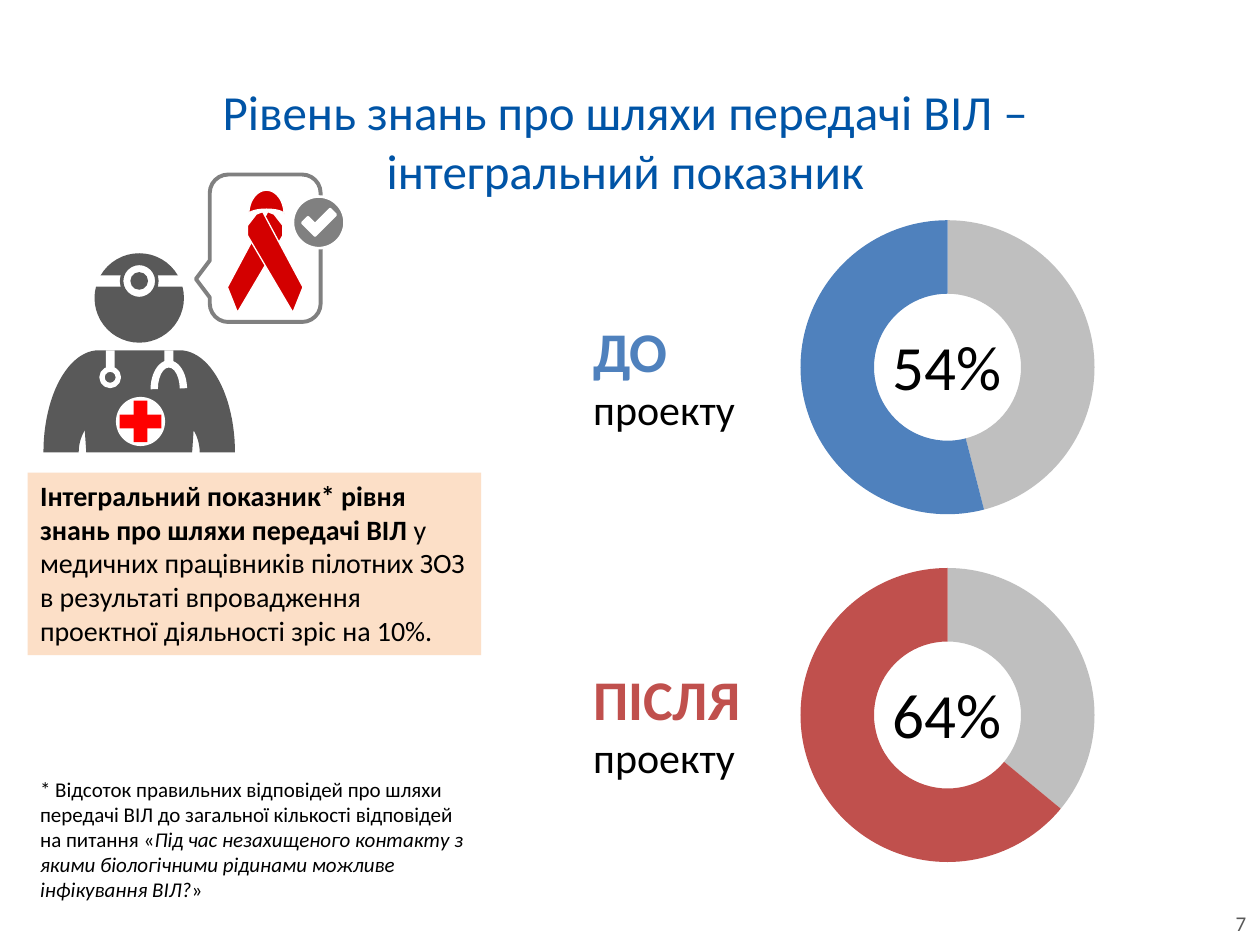
import math
import pptx
import pptx.chart.data
import pptx.dml.color
import pptx.enum.chart
import pptx.enum.shapes
import pptx.enum.text
import pptx.oxml
import pptx.oxml.ns
import pptx.util

W, H = 10, 7.5
FONT = "Calibri"
BLACK, WHITE, DARK, GREY = "000000", "FFFFFF", "595959", "808080"
BLUE, BRICK, RED, RIBBON = "4F81BD", "C0504D", "FF0000", "D30000"
TITLE_BLUE, REST, PEACH = "0054A6", "BFBFBF", "FCD5B5"
LEFT_COL, LEFT_W = 0.22, 3.6
FIRST_ROW, ROW_STEP = 1.61, 2.76

# Runs: text, size, colour, style (b bold, i italic)
TITLE = [("Рівень знань про шляхи передачі ВІЛ – \vінтегральний показник ",
          28, TITLE_BLUE, "")]
SUMMARY = [
    ("Інтегральний показник* рівня знань про шляхи передачі ВІЛ", 16, BLACK, "b"),
    (" у медичних працівників пілотних ЗОЗ в результаті впровадження "
     "проектної діяльності зріс на 10%.", 16, BLACK, ""),
]
FOOTNOTE = [
    ("* Відсоток правильних відповідей про шляхи передачі ВІЛ до загальної "
     "кількості відповідей на питання «", 12, BLACK, ""),
    ("Під час незахищеного контакту з якими біологічними рідинами можливе "
     "інфікування ВІЛ?", 12, BLACK, "i"),
    ("»", 12, BLACK, ""),
]
STAGES = [("ДО", 54, BLUE), ("ПІСЛЯ", 64, BRICK)]


def rgb(color):
    return pptx.dml.color.RGBColor.from_string(color)


def box(*lengths):
    return [pptx.util.Inches(v) for v in lengths]


def paint(s, fill=None, line=None, width=0):
    s.shadow.inherit = False
    if fill:
        s.fill.solid()
        s.fill.fore_color.rgb = rgb(fill)
    else:
        s.fill.background()
    if line:
        s.line.color.rgb = rgb(line)
        s.line.width = pptx.util.Pt(width)
    else:
        s.line.fill.background()
    return s


def add_preset(kind, center, size, fill=None, line=None, width=0, turn=0):
    preset = getattr(pptx.enum.shapes.MSO_SHAPE, kind)
    corner = [c - v / 2 for c, v in zip(center, size)]
    s = slide.shapes.add_shape(preset, *box(*corner, *size))
    s.rotation = turn
    return paint(s, fill, line, width)


def add_disc(center, size, *style):
    return add_preset("OVAL", center, (size, size), *style)


def add_bar(center, size, fill, turn=0):
    return add_preset("RECTANGLE", center, size, fill, turn=turn)


def add_outline(contours, fill, line=None, width=0):
    """One freeform; a contour inside another cuts a hole."""
    paths = [[box(*point) for point in c] for c in contours]
    builder = slide.shapes.build_freeform(*paths[0][0], scale=1.0)
    for k, path in enumerate(paths):
        if k:
            builder.move_to(*path[0])
        builder.add_line_segments(path[1:], close=True)
    return paint(builder.convert_to_shape(), fill, line, width)


def arc(center, rx, ry, start, end, steps=24):
    """Points on an ellipse; degrees run clockwise from the right."""
    angles = [math.radians(start + (end - start) * k / steps)
              for k in range(steps + 1)]
    return [(center[0] + rx * math.cos(a), center[1] + ry * math.sin(a))
            for a in angles]


def mirror(points, axis):
    return [(2 * axis - x, y) for x, y in points]


def write(s, runs, align="LEFT", anchor="TOP", wrap=True):
    tf = s.text_frame
    tf.word_wrap = wrap
    tf.vertical_anchor = getattr(pptx.enum.text.MSO_ANCHOR, anchor)
    p = tf.paragraphs[0]
    p.alignment = getattr(pptx.enum.text.PP_ALIGN, align)
    for text, size, color, style in runs:
        for k, line in enumerate(text.split("\v")):
            if k:
                p.add_line_break()
            r = p.add_run()
            r.text = line
            r.font.name, r.font.size = FONT, pptx.util.Pt(size)
            r.font.color.rgb = rgb(color)
            r.font.bold, r.font.italic = "b" in style, "i" in style


def add_text(at, runs, **options):
    write(slide.shapes.add_textbox(*box(*at)), runs, **options)


def add_doughnut(at, share, color):
    data = pptx.chart.data.CategoryChartData()
    data.categories = ["1", "2"]
    data.add_series("Series 1", [100 - share, share])
    kind = pptx.enum.chart.XL_CHART_TYPE.DOUGHNUT
    chart = slide.shapes.add_chart(kind, *box(*at), data).chart
    chart.has_legend = chart.has_title = False
    chart.font.name, chart.font.size = FONT, pptx.util.Pt(18)
    chart.font.color.rgb = rgb(BLACK)
    plot = chart.plots[0]
    plot.vary_by_categories = True
    plot._element.find(pptx.oxml.ns.qn("c:holeSize")).set("val", "55")
    for k, c in enumerate([REST, color]):
        fmt = plot.series[0].points[k].format
        fmt.fill.solid()
        fmt.fill.fore_color.rgb = rgb(c)
        fmt.line.fill.background()


def add_doctor(axis=1.105, shoulder=2.78, hem=3.59):
    # Right half: rounded shoulder and sleeve, cuff, armpit, side of the coat
    neck, sleeve, cuff, armpit = 0.32, 0.76, 0.48, 0.42
    half = arc((axis + neck, hem), sleeve - neck, hem - shoulder, -90, 0)
    half += arc((axis + armpit - 0.3, hem), cuff - armpit + 0.3, 0.35, 0, -30)
    half += [(axis + armpit, hem)]
    add_outline([half + mirror(half, axis)[::-1]], DARK)

    head, mirror_center = (axis, 2.365), (axis, 2.23)
    add_disc(head, 0.71, DARK)
    add_bar(mirror_center, (0.71, 0.09), WHITE)
    add_disc(mirror_center, 0.28, WHITE, DARK, 2)
    add_disc(mirror_center, 0.14, DARK)

    badge = (axis + 0.01, 3.345)
    add_disc(badge, 0.39, WHITE)
    for turn in (0, 90):
        add_bar(badge, (0.11, 0.33), RED, turn)

    # Stethoscope: chest piece on the left tube, forked end on the right one
    left, right = axis - 0.23, axis + 0.235
    add_bar((left, 2.89), (0.22, 0.07), WHITE, 90)
    add_disc((left, 2.995), 0.13, DARK, WHITE, 3)
    add_bar((right, 2.835), (0.11, 0.07), WHITE, 90)
    fork = add_preset("BLOCK_ARC", (right, 3.09), (0.29, 0.46), WHITE)
    for k, value in enumerate([108, 213.81, 0.2]):
        fork.adjustments[k] = value


def add_ribbon(axis=2.105, top=1.68):
    # A leg crosses the axis: offsets from (axis, top), clockwise
    crossing, outer_tip, inner_tip = (-0.02, 0), (0.3, 0.6), (0.22, 0.8)
    bend = [(-0.14, 0.19), (-0.14, 0.11), (-0.07, 0.02)]
    front = [(axis + dx, top + dy)
             for dx, dy in [crossing, outer_tip, inner_tip] + bend]
    for leg in (mirror(front, axis), front):
        add_outline([leg], RIBBON, WHITE, 0.75)
    base = (axis + 0.01, top + 0.02)
    loop = arc(base, 0.14, 0.19, 180, 360) + arc(base, 0.14, 0.04, 0, -180)
    add_outline([loop], RIBBON, WHITE, 0.75)


def add_check(center=(2.53, 1.765), radius=0.205):
    long_arm, short_arm, stroke = 0.165, 0.1, 0.045
    x, y = center[0] - 0.03, center[1] + 0.105   # lower corner of the tick
    tick = [(x, y), (x + long_arm, y - long_arm),
            (x + long_arm - stroke, y - long_arm - stroke), (x, y - 2 * stroke),
            (x - short_arm + stroke, y - short_arm - stroke),
            (x - short_arm, y - short_arm)]
    add_disc(center, 0.33, WHITE)
    add_outline([tick, arc(center, radius, radius, 0, 360, 60)], GREY, WHITE, 1.5)


def add_bubble():
    s = add_preset("ROUNDED_RECTANGULAR_CALLOUT", (2.105, 1.97), (1.17, 0.88),
                   line=GREY, width=2.25, turn=90)
    s._element.spPr.xfrm.set("flipH", "1")


def add_summary(height=1.45):
    s = add_bar((LEFT_COL + LEFT_W / 2, 3.75 + height / 2), (LEFT_W, height), PEACH)
    tint = s._element.spPr.find(".//" + pptx.oxml.ns.qn("a:srgbClr"))
    tint.append(pptx.oxml.parse_xml(
        '<a:alpha %s val="75000"/>' % pptx.oxml.ns.nsdecls("a")))
    write(s, SUMMARY)


prs = pptx.Presentation()
prs.slide_width, prs.slide_height = box(W, H)
slide = prs.slides.add_slide(prs.slide_layouts[6])

add_text((0.28, 0.6, 9.45, 0.94), TITLE, align="CENTER")
add_doctor()
add_ribbon()
add_bubble()
add_check()
add_summary()
add_text((LEFT_COL, 6.11, LEFT_W, 1.18), FOOTNOTE)

for row, (stage, share, color) in enumerate(STAGES):
    top = FIRST_ROW + row * ROW_STEP
    add_doughnut((6.19, top, 2.66, 2.61), share, color)
    add_text((6.98, top + 0.94, 1.07, 0.71), [(f"{share}%", 36, BLACK, "")],
             align="CENTER", wrap=False)
    add_text((4.61, top + 0.85, 1.4, 1.04),
             [(stage, 32, color, "b"), (" проекту", 24, BLACK, "")],
             anchor="MIDDLE")

add_text((9.04, 7.16, 0.95, 0.33), [("7", 12, DARK, "")],
         align="RIGHT", anchor="MIDDLE")
prs.save("out.pptx")
